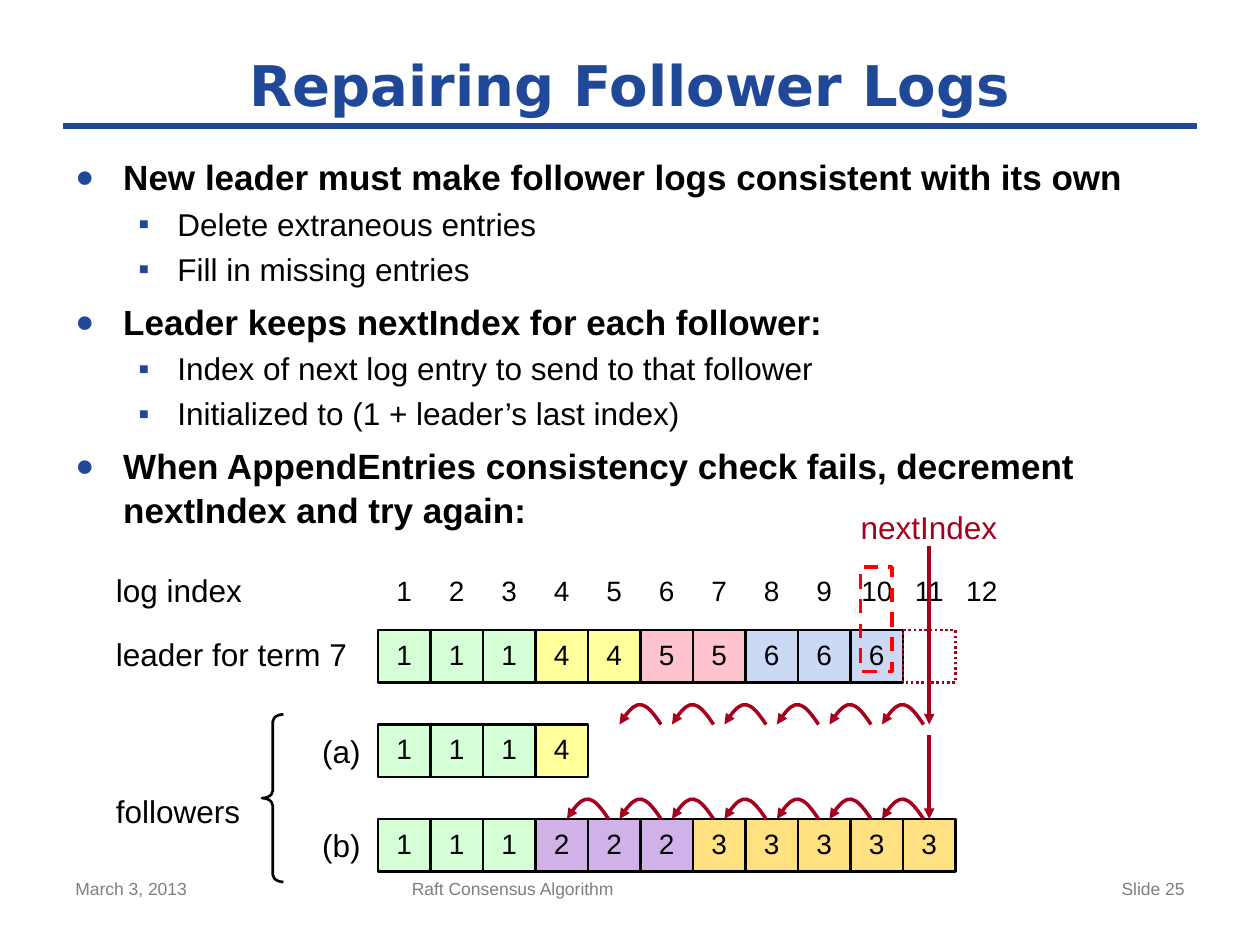
"""Build the slide on repairing follower logs in the Raft consensus algorithm."""
from lxml import etree
from pptx import Presentation
from pptx import util as u
from pptx.dml.color import RGBColor
from pptx.enum import dml, shapes, text
from pptx.oxml import ns

COLORS = {
    "blue": "1F4899", "black": "000000", "gray": "7F7F7F", "crimson": "A5001E", "red": "FF0000",
    1: "D5FFD5", 2: "D1B2E8", 3: "FFE181", 4: "FFFF9B", 5: "FFC3CE", 6: "CCD9F4",
}
CELL = 5 / 12
LOG_LEFT = 3
LEFT, CENTER, RIGHT = text.PP_ALIGN.LEFT, text.PP_ALIGN.CENTER, text.PP_ALIGN.RIGHT
LOGS = {
    5: [1, 1, 1, 4, 4, 5, 5, 6, 6, 6],
    5.75: [1, 1, 1, 4],
    6.5: [1, 1, 1, 2, 2, 2, 3, 3, 3, 3, 3],
}
BODY = [
    (0, 12, "New leader must make follower logs consistent with its own"),
    (1, 3, "Delete extraneous entries"),
    (1, 3, "Fill in missing entries"),
    (0, 6, "Leader keeps nextIndex for each follower:"),
    (1, 3, "Index of next log entry to send to that follower"),
    (1, 3, "Initialized to (1 + leader’s last index)"),
    (0, 6, "When AppendEntries consistency check fails, decrement nextIndex and try again:"),
]


def rgb(name):
    return RGBColor.from_string(COLORS[name])


def column(index):
    return LOG_LEFT + (index - 1) * CELL


def add_xml(parent, tag, **attributes):
    return etree.SubElement(parent, ns.qn(tag), {key: str(value) for key, value in attributes.items()})


class SlideBuilder:
    """Draws the elements of one slide in a shared style."""

    def __init__(self, slide, font="Arial"):
        self.slide = slide
        self.shapes = slide.shapes
        self.font = font

    def style(self, para, size, color="black", align=LEFT, bold=False, spacing=None, font=None):
        para.alignment = align
        if spacing:
            para.line_spacing = spacing
        para.font.name = font or self.font
        para.font.size = u.Pt(size)
        para.font.bold = bold
        para.font.color.rgb = rgb(color)

    def title(self, words, *place):
        title = self.shapes.title
        title.left, title.top, title.width, title.height = map(u.Inches, place)
        frame = title.text_frame
        frame.text = words
        frame.auto_size = text.MSO_AUTO_SIZE.NONE
        frame.vertical_anchor = text.MSO_ANCHOR.MIDDLE
        self.style(frame.paragraphs[0], 32, "blue", CENTER, bold=True, font="DejaVu Sans")

    def label(self, words, *place, size=18, inset=True, **style):
        frame = self.shapes.add_textbox(*map(u.Inches, place)).text_frame
        frame.word_wrap = True
        if not inset:
            frame.margin_left = frame.margin_right = frame.margin_top = frame.margin_bottom = 0
        frame.text = words
        self.style(frame.paragraphs[0], size, **style)

    def bullets(self, items, *place):
        frame = self.shapes.add_textbox(*map(u.Inches, place)).text_frame
        frame.word_wrap = True
        for number, (level, before, words) in enumerate(items):
            para = frame.add_paragraph() if number else frame.paragraphs[0]
            para.text = words
            para.level = level
            para.space_before = u.Pt(before)
            para.line_spacing = 1.05
            margin, hang, mark, percent = [(0.38, 0.38, "●", 90), (0.81, 0.31, "▪", 100)][level]
            properties = para._p.get_or_add_pPr()
            properties.set("marL", str(u.Inches(margin)))
            properties.set("indent", str(-u.Inches(hang)))
            add_xml(add_xml(properties, "a:buClr"), "a:srgbClr", val=COLORS["blue"])
            add_xml(properties, "a:buSzPct", val=percent * 1000)
            add_xml(properties, "a:buFont", typeface=self.font)
            add_xml(properties, "a:buChar", char=mark)
            self.style(para, 18 if level else 20, bold=level == 0)

    def shape(self, kind, *place, fill=None, line="black", width=1.5, dash=None):
        shape = self.shapes.add_shape(kind, *map(u.Inches, place))
        shape.shadow.inherit = False
        if fill:
            shape.fill.solid()
            shape.fill.fore_color.rgb = rgb(fill)
        else:
            shape.fill.background()
        shape.line.color.rgb = rgb(line)
        shape.line.width = u.Pt(width)
        if dash:
            shape.line.dash_style = dash
        return shape

    def entry(self, term, left, top):
        box = self.shape(shapes.MSO_SHAPE.RECTANGLE, left, top, CELL, CELL, fill=term)
        frame = box.text_frame
        frame.margin_left = frame.margin_right = frame.margin_top = frame.margin_bottom = 0
        frame.vertical_anchor = text.MSO_ANCHOR.MIDDLE
        frame.text = str(term)
        self.style(frame.paragraphs[0], 16, align=CENTER, spacing=u.Pt(17))
        return box

    def line(self, x1, y1, x2, y2, color, width, arrow=False):
        line = self.shapes.add_connector(shapes.MSO_CONNECTOR.STRAIGHT, *map(u.Inches, (x1, y1, x2, y2)))
        line.line.color.rgb = rgb(color)
        line.line.width = u.Pt(width)
        if arrow:
            add_xml(line.line._get_or_add_ln(), "a:tailEnd", type="triangle")
        add_xml(line._element.spPr, "a:effectLst")
        return line

    def hop(self, left, bottom):
        x, y = u.Inches(left), u.Inches(bottom)
        width, height = u.Inches(0.33), u.Inches(0.15)
        builder = self.shapes.build_freeform(x + width, y)
        builder.add_line_segments([(x + width // 2, y - height), (x, y)], close=False)
        hop = builder.convert_to_shape()
        path = hop._element.find(".//" + ns.qn("a:path"))
        for segment in path.findall(ns.qn("a:lnTo")):
            path.remove(segment)
        curve = add_xml(path, "a:cubicBezTo")
        for across, down in [(0.2, -0.05), (0.12, -0.05), (0, 0.15)]:
            add_xml(curve, "a:pt", x=u.Inches(across), y=u.Inches(down))
        hop.shadow.inherit = False
        hop.fill.background()
        hop.line.color.rgb = rgb("crimson")
        hop.line.width = u.Pt(2)
        add_xml(hop.line._get_or_add_ln(), "a:tailEnd", type="triangle")


def main():
    deck = Presentation()
    deck.slide_width, deck.slide_height = u.Inches(10), u.Inches(7.5)
    page = SlideBuilder(deck.slides.add_slide(deck.slide_layouts[5]))

    page.line(0.5, 1, 9.5, 1, "blue", 4)
    page.title("Repairing Follower Logs", 0.5, 0.33, 9, 0.67)
    page.bullets(BODY, 0.5, 1.17, 9, 3.33)

    for index in range(1, 13):
        width = CELL if index < 10 else 0.58
        left = column(index) + (CELL - width) / 2
        page.label(str(index), left, 4.5, width, 0.37, size=16, align=CENTER)
    for top, terms in LOGS.items():
        for index, term in enumerate(terms, 1):
            last_entry = page.entry(term, column(index), top)

    page.label("log index", 0.92, 4.53, 1.25, 0.3, inset=False)
    page.label("leader for term 7", 0.92, 5.08, 2, 0.27, inset=False, spacing=u.Pt(19))
    page.label("followers", 0.92, 6.32, 1, 0.27, inset=False, spacing=u.Pt(19))
    page.label("(a)", 2.5, 5.81, 0.42, 0.3, inset=False, align=CENTER)
    page.label("(b)", 2.5, 6.56, 0.42, 0.3, inset=False, align=CENTER)
    brace = page.shape(shapes.MSO_SHAPE.LEFT_BRACE, 2.08, 5.67, 0.17, 1.33)
    brace.adjustments[0] = 0.34

    for bottom, first in [(5.75, 5), (6.5, 4)]:
        for index in range(first, 11):
            page.hop(column(index) + CELL * 0.6, bottom)

    pointer = column(11) + CELL / 2
    page.line(pointer, 4.33, pointer, 5.75, "crimson", 2, arrow=True)
    page.line(pointer, 5.83, pointer, 6.5, "crimson", 2, arrow=True).end_connect(last_entry, 0)
    page.label("nextIndex", 6.83, 4.07, 1.09, 0.27, inset=False, color="crimson", spacing=u.Pt(19))
    rectangle = shapes.MSO_SHAPE.RECTANGLE
    page.shape(rectangle, column(11), 5, CELL, CELL, line="crimson", dash=dml.MSO_LINE.ROUND_DOT)
    page.shape(rectangle, 6.83, 4.5, 0.25, 0.83, line="red", width=2, dash=dml.MSO_LINE.DASH)

    for words, left, width, align in [
        ("March 3, 2013", 0.5, 2.33, LEFT),
        ("Raft Consensus Algorithm", 3.17, 3.75, LEFT),
        ("Slide 25", 7.17, 2.33, RIGHT),
    ]:
        page.label(words, left, 6.92, width, 0.43, size=10, color="gray", align=align)
    deck.save("out.pptx")


if __name__ == "__main__":
    main()
